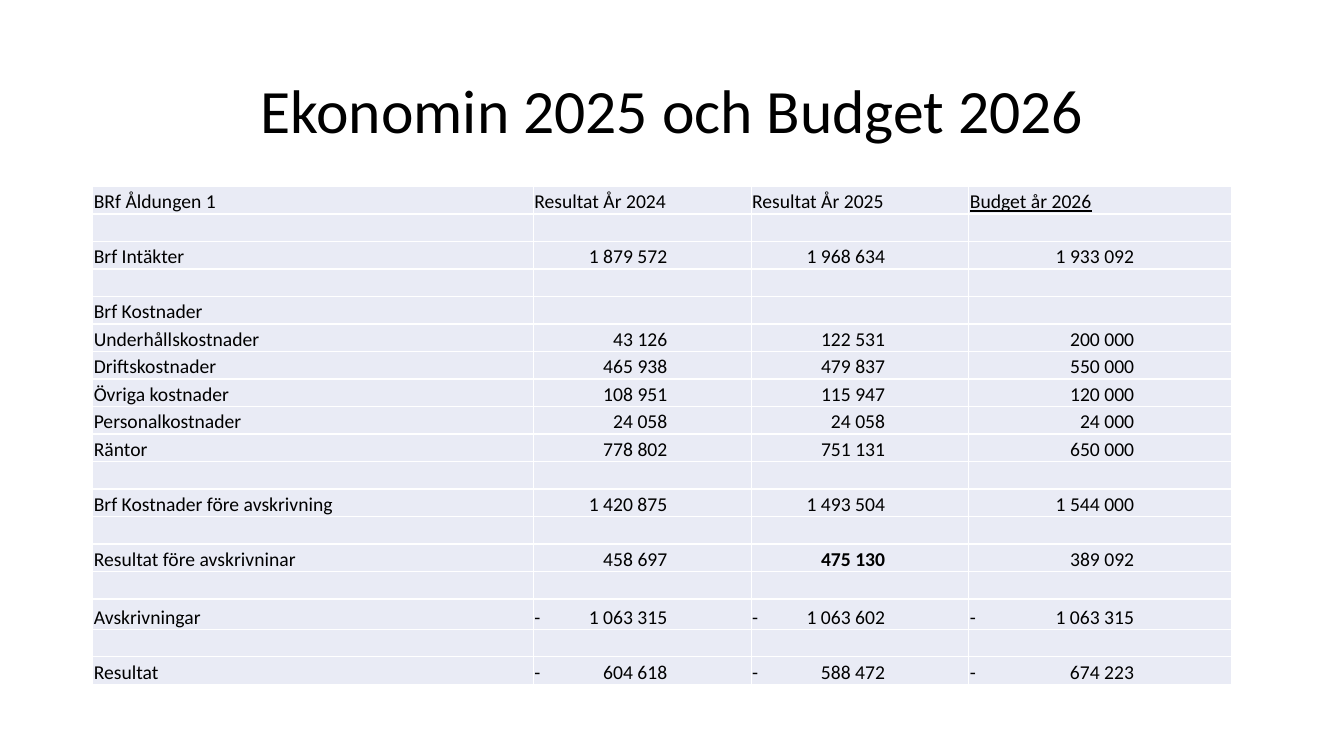
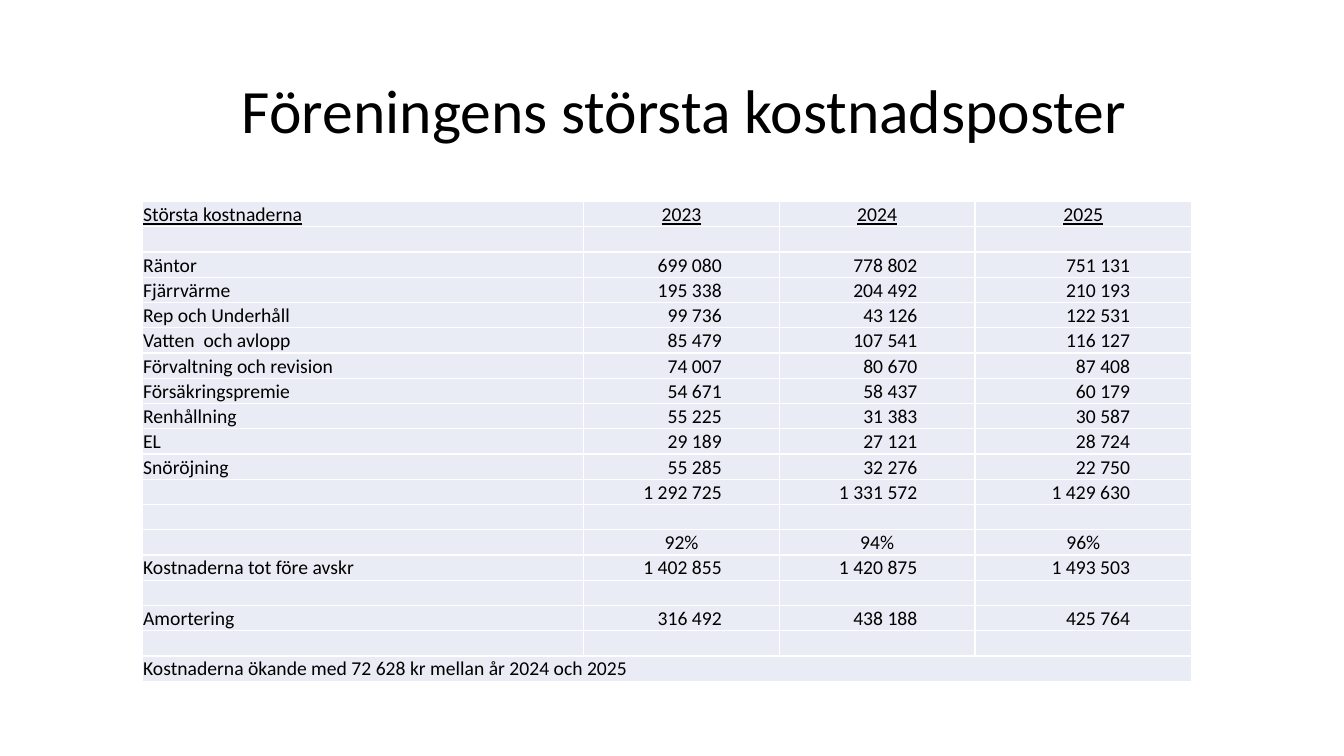
import pptx
import pptx.dml.color
import pptx.enum.text
import pptx.oxml.ns
import pptx.util
from lxml import etree

Inches = pptx.util.Inches
Align = pptx.enum.text.PP_ALIGN
Anchor = pptx.enum.text.MSO_ANCHOR
qn = pptx.oxml.ns.qn

FONT = "Calibri"
BLACK, WHITE, CELL_FILL = "000000", "FFFFFF", "E9EBF5"
TABLE_SIZE, TITLE_SIZE = 14, 44
INSET = 0.01
EMPTY = ("", "", "", "")

BUDGET = {
    "title": "Ekonomin 2025 och Budget 2026",
    "title_align": Align.CENTER,
    "title_inset": 0.1,
    "left": 0.92, "top": 1.85, "height": 4.94,
    "columns": (4.37, 2.16, 2.16, 2.61),
    "number_insets": (0, 0.83, 0.83, 0.97),
    "fixed_heights": {15: 0.3},
    "header_align": Align.LEFT,
    "underlined": {(0, 3)},
    "bold": {(13, 2)},
    "merged_rows": (),
    "rows": [
        ("BRf Åldungen 1", "Resultat År 2024", "Resultat År 2025", "Budget år 2026"),
        EMPTY,
        ("Brf Intäkter", "1 879 572", "1 968 634", "1 933 092"),
        EMPTY,
        ("Brf Kostnader", "", "", ""),
        ("Underhållskostnader", "43 126", "122 531", "200 000"),
        ("Driftskostnader", "465 938", "479 837", "550 000"),
        ("Övriga kostnader", "108 951", "115 947", "120 000"),
        ("Personalkostnader", "24 058", "24 058", "24 000"),
        ("Räntor", "778 802", "751 131", "650 000"),
        EMPTY,
        ("Brf Kostnader före avskrivning", "1 420 875", "1 493 504", "1 544 000"),
        EMPTY,
        ("Resultat före avskrivninar", "458 697", "475 130", "389 092"),
        EMPTY,
        ("Avskrivningar", "-\t1 063 315", "-\t1 063 602", "-\t1 063 315"),
        EMPTY,
        ("Resultat", "-\t604 618", "-\t588 472", "-\t674 223"),
    ],
}

COSTS = {
    "title": "Föreningens största kostnadsposter",
    "title_align": Align.LEFT,
    "title_inset": 1.48,
    "left": 1.41, "top": 2, "height": 4.76,
    "columns": (4.38, 1.94, 1.94, 2.15),
    "number_insets": (0, 0.57, 0.57, 0.61),
    "fixed_heights": {},
    "header_align": Align.CENTER,
    "underlined": {(0, column) for column in range(4)},
    "bold": set(),
    "merged_rows": (18,),
    "rows": [
        ("Största kostnaderna", "2023", "2024", "2025"),
        EMPTY,
        ("Räntor", "699 080", "778 802", "751 131"),
        ("Fjärrvärme", "195 338", "204 492", "210 193"),
        ("Rep och Underhåll", "99 736", "43 126", "122 531"),
        ("Vatten  och avlopp", "85 479", "107 541", "116 127"),
        ("Förvaltning och revision", "74 007", "80 670", "87 408"),
        ("Försäkringspremie", "54 671", "58 437", "60 179"),
        ("Renhållning", "55 225", "31 383", "30 587"),
        ("EL", "29 189", "27 121", "28 724"),
        ("Snöröjning", "55 285", "32 276", "22 750"),
        ("", "1 292 725", "1 331 572", "1 429 630"),
        EMPTY,
        ("", "92%", "94%", "96%"),
        ("Kostnaderna tot före avskr", "1 402 855", "1 420 875", "1 493 503"),
        EMPTY,
        ("Amortering", "316 492", "438 188", "425 764"),
        EMPTY,
        ("Kostnaderna ökande med 72 628 kr mellan år 2024 och 2025", "", "", ""),
    ],
}


def color(value):
    return pptx.dml.color.RGBColor.from_string(value)


def write(paragraph, text, *, size, align=Align.LEFT, bold=False, underline=False,
          line_spacing=None, tab=None):
    paragraph.alignment = align
    if line_spacing:
        paragraph.line_spacing = line_spacing
    if tab:
        tabs = etree.SubElement(paragraph._p.get_or_add_pPr(), qn("a:tabLst"))
        etree.SubElement(tabs, qn("a:tab"), pos=str(Inches(tab)), algn="r")
    if not text:
        etree.SubElement(paragraph._p, qn("a:endParaRPr"), sz=str(size * 100))
        return
    run = paragraph.add_run()
    run.text = text
    run.font.name = FONT
    run.font.size = pptx.util.Pt(size)
    run.font.bold = bold
    run.font.underline = underline
    run.font.color.rgb = color(BLACK)


def style_cell(cell):
    cell.margin_left = cell.margin_right = cell.margin_top = Inches(INSET)
    cell.margin_bottom = 0
    cell.vertical_anchor = Anchor.BOTTOM
    properties = cell._tc.get_or_add_tcPr()
    for side in ("lnL", "lnR", "lnT", "lnB"):
        line = etree.SubElement(properties, qn(f"a:{side}"), w=str(pptx.util.Pt(1)))
        fill = etree.SubElement(line, qn("a:solidFill"))
        etree.SubElement(fill, qn("a:srgbClr"), val=WHITE)
    cell.fill.solid()
    cell.fill.fore_color.rgb = color(CELL_FILL)


def add_title(slide, content):
    box = slide.shapes.add_textbox(Inches(0.92), Inches(0.4), Inches(11.5), Inches(1.45))
    frame = box.text_frame
    frame.word_wrap = True
    frame.vertical_anchor = Anchor.MIDDLE
    frame.margin_left = Inches(content["title_inset"])
    write(frame.paragraphs[0], content["title"], size=TITLE_SIZE,
          align=content["title_align"], line_spacing=0.9)


def fill_cell(cell, text, row, column, content):
    style_cell(cell)
    align, tab = Align.LEFT, None
    inset = content["number_insets"][column]
    if column and row == 0:
        align = content["header_align"]
    elif text.endswith("%"):
        align = Align.CENTER
    elif text.startswith("-"):
        tab = content["columns"][column] - inset - INSET
    elif column and text:
        align = Align.RIGHT
        cell.margin_right = Inches(inset)
    write(cell.text_frame.paragraphs[0], text, size=TABLE_SIZE, align=align, tab=tab,
          bold=(row, column) in content["bold"],
          underline=(row, column) in content["underlined"])


def add_figures(slide, content):
    rows, columns = content["rows"], content["columns"]
    fixed = content["fixed_heights"]
    row_height = (content["height"] - sum(fixed.values())) / (len(rows) - len(fixed))
    table = slide.shapes.add_table(
        len(rows), len(columns), Inches(content["left"]), Inches(content["top"]),
        Inches(sum(columns)), Inches(content["height"])).table
    table.first_row = table.horz_banding = False
    for column, width in enumerate(columns):
        table.columns[column].width = Inches(width)
    for row, texts in enumerate(rows):
        table.rows[row].height = Inches(fixed.get(row, row_height))
        for column, text in enumerate(texts):
            fill_cell(table.cell(row, column), text, row, column, content)
    for row in content["merged_rows"]:
        table.cell(row, 0).merge(table.cell(row, len(columns) - 1))


def main():
    presentation = pptx.Presentation()
    presentation.slide_width = Inches(13.33)
    presentation.slide_height = Inches(7.5)
    for content in (BUDGET, COSTS):
        slide = presentation.slides.add_slide(presentation.slide_layouts[6])
        add_title(slide, content)
        add_figures(slide, content)
    presentation.save("out.pptx")


if __name__ == "__main__":
    main()
